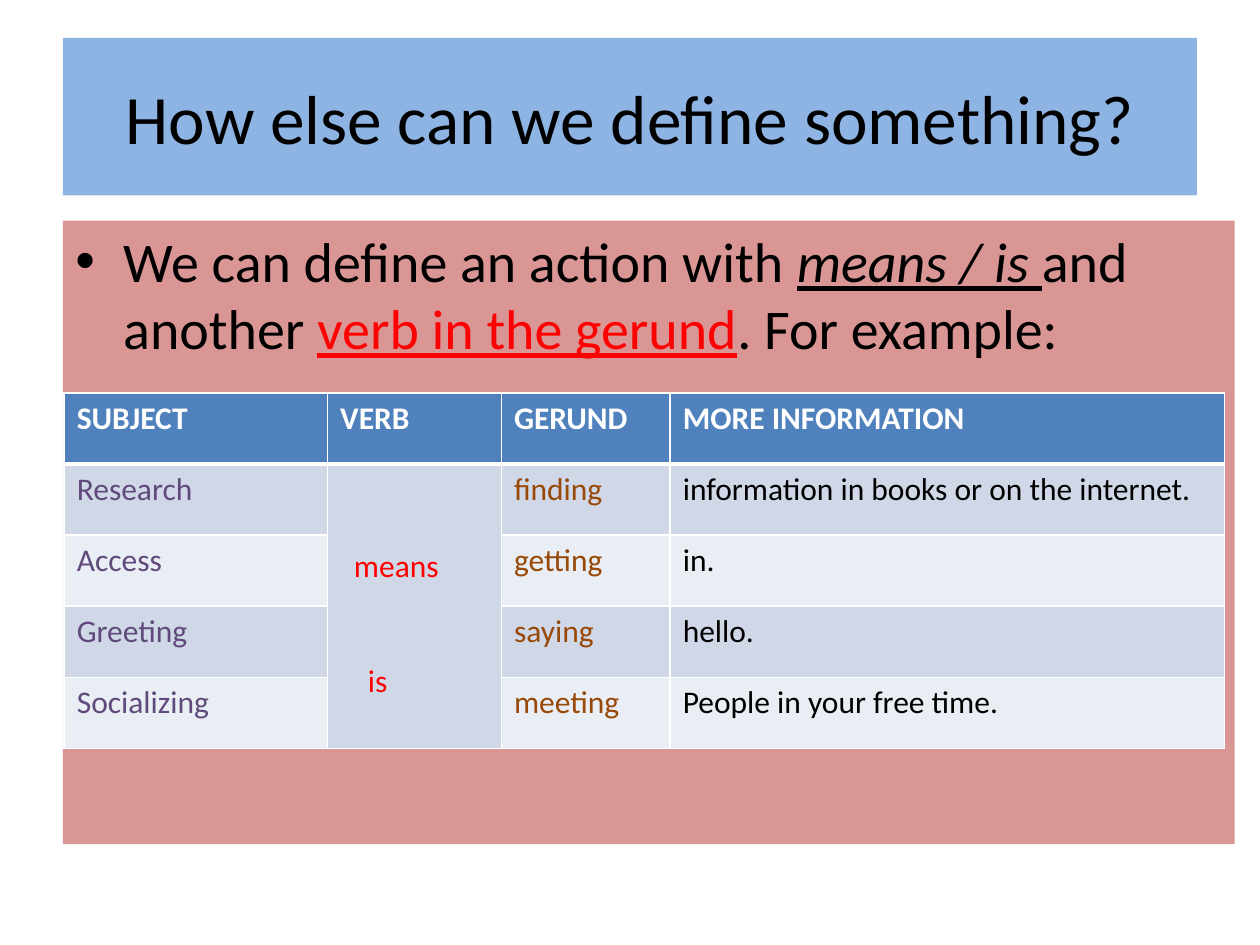
from typing import NamedTuple, Optional, Sequence

from pptx import Presentation, oxml, util as u
from pptx.dml.color import RGBColor
from pptx.enum import shapes, text

"""Build a slide that explains how to define an action with a gerund."""

FONT = "Calibri"
BLACK = RGBColor(0x00, 0x00, 0x00)
WHITE = RGBColor(0xFF, 0xFF, 0xFF)
RED = RGBColor(0xFF, 0x00, 0x00)
PURPLE = RGBColor(0x60, 0x4A, 0x7B)
BROWN = RGBColor(0x98, 0x48, 0x07)
SKY = RGBColor(0x8E, 0xB4, 0xE3)
ROSE = RGBColor(0xD9, 0x96, 0x94)
HEADER = RGBColor(0x4F, 0x81, 0xBD)
BANDS = (RGBColor(0xD0, 0xD8, 0xE8), RGBColor(0xE9, 0xED, 0xF4))
NS = 'xmlns:a="http://schemas.openxmlformats.org/drawingml/2006/main"'


class Run(NamedTuple):
    text: str
    color: RGBColor = BLACK
    bold: bool = False
    italic: bool = False
    underline: bool = False


class Panel(NamedTuple):
    left: float
    top: float
    width: float
    height: float
    fill: RGBColor
    size: float
    anchor: text.MSO_ANCHOR
    align: text.PP_ALIGN
    runs: Sequence[Run]
    bullet: Optional[str] = None


PANELS = (
    Panel(0.5, 0.3, 9, 1.25, SKY, 39.6, text.MSO_ANCHOR.MIDDLE, text.PP_ALIGN.CENTER,
          [Run("How else can we define something?")]),
    Panel(0.5, 1.75, 9.3, 4.95, ROSE, 32, text.MSO_ANCHOR.TOP, text.PP_ALIGN.LEFT,
          [Run("We can define an action with "),
           Run("means / is ", italic=True, underline=True),
           Run("and another "),
           Run("verb in the gerund", RED, underline=True),
           Run(". For example:")], "•"),
)
COLUMN_WIDTHS = (2.09, 1.38, 1.34, 4.4)
COLUMN_COLORS = (PURPLE, RED, BROWN, BLACK)
ROW_HEIGHT = 0.564
ROWS = (
    ("SUBJECT", "VERB", "GERUND", "MORE INFORMATION"),
    ("Research", "", "finding", "information in books or on the internet."),
    ("Access", "", "getting", "in."),
    ("Greeting", "", "saying", "hello."),
    ("Socializing", "", "meeting", "People in your free time."),
)
VERBS = (("means", 0.11), ("is", 0.22))


def add_runs(p, runs: Sequence[Run], size: float) -> None:
    """Append formatted runs to a paragraph."""
    for run in runs:
        r = p.add_run()
        r.text = run.text
        r.font.name, r.font.size = FONT, u.Pt(size)
        r.font.bold, r.font.italic, r.font.underline = run.bold, run.italic, run.underline
        r.font.color.rgb = run.color


def set_indent(p, left: float, first: float = 0) -> None:
    """Set the left margin and first-line indent in inches."""
    pPr = p._p.get_or_add_pPr()
    pPr.set("marL", str(u.Inches(left)))
    pPr.set("indent", str(u.Inches(first)))


def add_panel(s, panel: Panel) -> None:
    """Draw a filled rectangle with one paragraph."""
    sp = s.shapes.add_shape(shapes.MSO_SHAPE.RECTANGLE, u.Inches(panel.left), u.Inches(panel.top),
                            u.Inches(panel.width), u.Inches(panel.height))
    sp.shadow.inherit = False
    sp.fill.solid()
    sp.fill.fore_color.rgb = panel.fill
    sp.line.fill.background()
    tf = sp.text_frame
    tf.word_wrap = True
    tf.vertical_anchor = panel.anchor
    p = tf.paragraphs[0]
    p.alignment = panel.align
    if panel.bullet:
        set_indent(p, 0.38, -0.38)
        pPr = p._p.get_or_add_pPr()
        pPr.append(oxml.parse_xml(f'<a:buFont {NS} typeface="Arial"/>'))
        pPr.append(oxml.parse_xml(f'<a:buChar {NS} char="{panel.bullet}"/>'))
    add_runs(p, panel.runs, panel.size)


def style_cell(cell, fill: RGBColor, top: float, bottom: float) -> None:
    """Give a cell white borders and a solid fill."""
    tcPr = cell._tc.get_or_add_tcPr()
    for side, width in (("L", 1), ("R", 1), ("T", top), ("B", bottom)):
        tcPr.append(oxml.parse_xml(
            f'<a:ln{side} {NS} w="{u.Pt(width)}"><a:solidFill>'
            f'<a:srgbClr val="{WHITE}"/></a:solidFill></a:ln{side}>'))
    cell.fill.solid()
    cell.fill.fore_color.rgb = fill


def add_verbs(cell) -> None:
    """Write the linking verbs spread down the merged cell."""
    cell.margin_top = u.Inches(0.66)
    tf = cell.text_frame
    for i, (verb, indent) in enumerate(VERBS):
        p = tf.add_paragraph() if i else tf.paragraphs[0]
        p.space_before = u.Pt(44 if i else 0)
        set_indent(p, indent)
        add_runs(p, [Run(verb, RED)], 18)


def add_examples(s) -> None:
    """Draw the table of example definitions."""
    table = s.shapes.add_table(len(ROWS), len(COLUMN_WIDTHS), u.Inches(0.51), u.Inches(3.12),
                               u.Inches(sum(COLUMN_WIDTHS)),
                               u.Inches(ROW_HEIGHT * len(ROWS))).table
    for column, width in zip(table.columns, COLUMN_WIDTHS):
        column.width = u.Inches(width)
    for i, row in enumerate(ROWS):
        table.rows[i].height = u.Inches(ROW_HEIGHT)
        for j, words in enumerate(row):
            cell = table.cell(i, j)
            header = i == 0
            band = BANDS[0] if j == 1 else BANDS[(i - 1) % 2]
            style_cell(cell, HEADER if header else band, 3 if i == 1 else 1, 3 if header else 1)
            if words:
                color = WHITE if header else COLUMN_COLORS[j]
                add_runs(cell.text_frame.paragraphs[0], [Run(words, color, bold=header)], 18)
    verb_cell = table.cell(1, 1)
    verb_cell.merge(table.cell(len(ROWS) - 1, 1))
    add_verbs(verb_cell)


def main() -> None:
    """Build and save the slide."""
    prs = Presentation()
    prs.slide_width, prs.slide_height = u.Inches(10), u.Inches(7.5)
    s = prs.slides.add_slide(prs.slide_layouts[6])
    for panel in PANELS:
        add_panel(s, panel)
    add_examples(s)
    prs.save("out.pptx")


if __name__ == "__main__":
    main()
